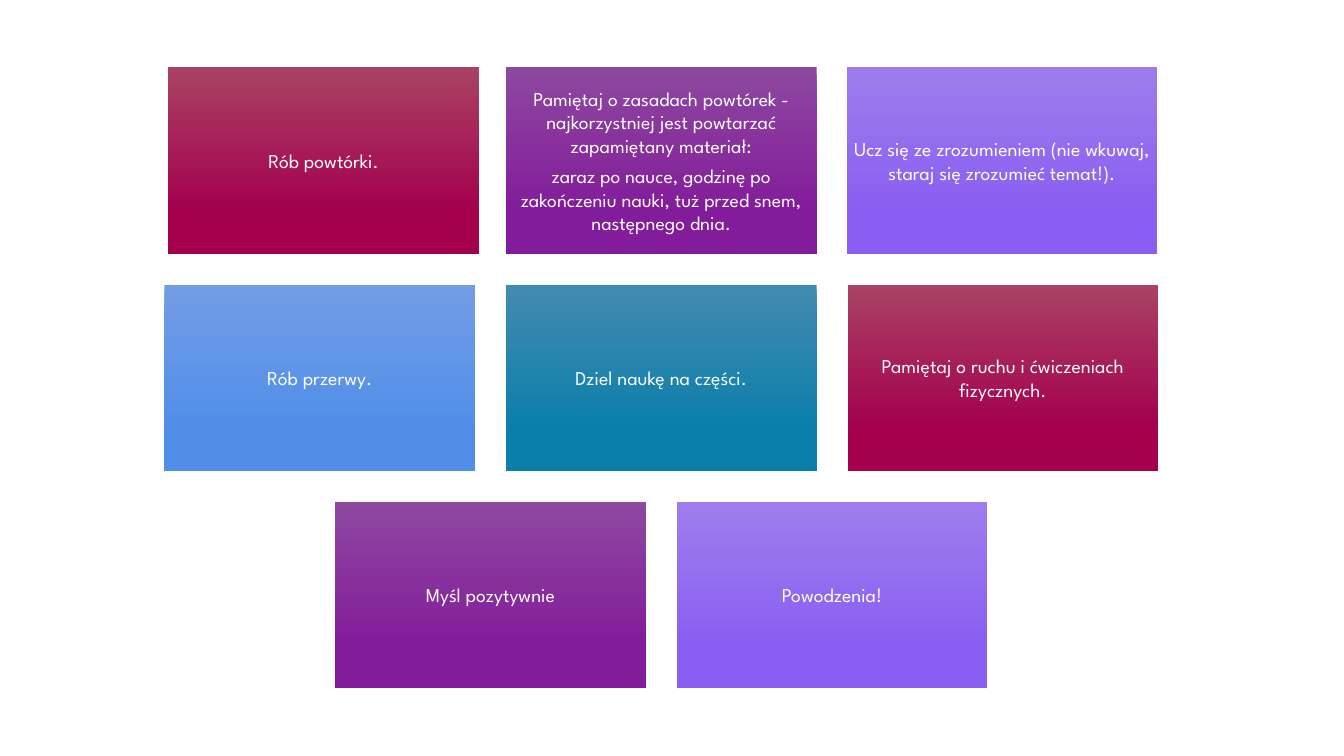
import pptx
import pptx.dml.color
import pptx.enum.shapes
import pptx.enum.text
import pptx.util
from dataclasses import dataclass

Pt = pptx.util.Pt
RGB = pptx.dml.color.RGBColor.from_string


@dataclass(frozen=True)
class Theme:
    font: str = "League Spartan"
    text_size: int = 14
    text: str = "FFFFFF"
    # Each gradient runs from the top colour to the bottom colour.
    crimson: tuple = ("A94263", "A4004E")
    purple: tuple = ("8D48A0", "831C9A")
    violet: tuple = ("9D7DED", "8A5EF1")
    blue: tuple = ("729DE5", "518EE9")
    teal: tuple = ("438AB0", "0B7FAB")


theme = Theme()

deck = pptx.Presentation()
deck.slide_width, deck.slide_height = Pt(960), Pt(540)
page = deck.slides.add_slide(deck.slide_layouts[6])

CARD_WIDTH, CARD_HEIGHT = 222, 133
COLUMN_STEP, ROW_STEP = 244, 155.2
MIDDLE_LEFT, FIRST_TOP = 361.4, 48.2

# Per card: sideways nudge in points, gradient, paragraphs.
rows = [
    [
        (2.8, theme.crimson, ["Rób powtórki."]),
        (0, theme.purple, [
            "Pamiętaj o zasadach powtórek - najkorzystniej jest powtarzać zapamiętany materiał:",
            "zaraz po nauce, godzinę po zakończeniu nauki, tuż przed snem, następnego dnia.",
        ]),
        (-0.6, theme.violet, ["Ucz się ze zrozumieniem (nie wkuwaj, staraj się zrozumieć temat!)."]),
    ],
    [
        (0, theme.blue, ["Rób przerwy."]),
        (0, theme.teal, ["Dziel naukę na części."]),
        (0, theme.crimson, ["Pamiętaj o ruchu i ćwiczeniach fizycznych."]),
    ],
    [
        (0, theme.purple, ["Myśl pozytywnie"]),
        (0, theme.violet, ["Powodzenia!"]),
    ],
]

frame_format = {
    "word_wrap": True,
    "vertical_anchor": pptx.enum.text.MSO_ANCHOR.MIDDLE,
    "margin_left": Pt(4.2),
    "margin_right": Pt(4.2),
    "margin_top": Pt(4.2),
    "margin_bottom": Pt(4.2),
}
para_format = {
    "alignment": pptx.enum.text.PP_ALIGN.CENTER,
    "space_after": Pt(4.9),
}
font_format = {"name": theme.font, "size": Pt(theme.text_size)}


def apply_format(target, values):
    for name, value in values.items():
        setattr(target, name, value)


for row_number, cards in enumerate(rows):
    for column, (nudge, gradient, texts) in enumerate(cards):
        offset = column - (len(cards) - 1) / 2
        card = page.shapes.add_shape(
            pptx.enum.shapes.MSO_SHAPE.RECTANGLE,
            Pt(MIDDLE_LEFT + offset * COLUMN_STEP + nudge),
            Pt(FIRST_TOP + row_number * ROW_STEP),
            Pt(CARD_WIDTH),
            Pt(CARD_HEIGHT),
        )
        card.shadow.inherit = False
        card.line.fill.background()
        card.fill.gradient()
        card.fill.gradient_angle = 270
        for stop, position, color in zip(card.fill.gradient_stops, (0, 0.78), gradient):
            stop.position = position
            stop.color.rgb = RGB(color)

        frame = card.text_frame
        apply_format(frame, frame_format)
        for number, text in enumerate(texts):
            para = frame.add_paragraph() if number else frame.paragraphs[0]
            apply_format(para, para_format)
            span = para.add_run()
            span.text = text
            apply_format(span.font, font_format)
            span.font.color.rgb = RGB(theme.text)

deck.save("out.pptx")
